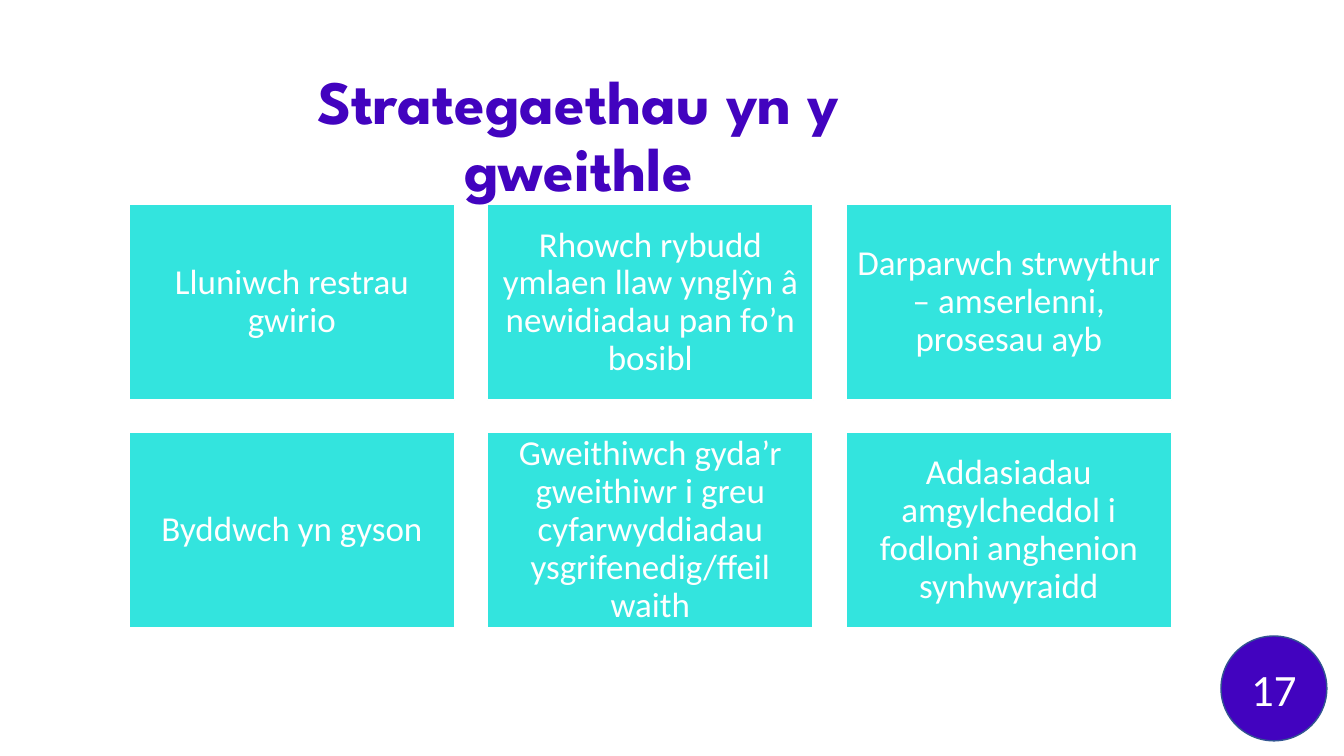
"""Build the slide of six workplace strategies."""
from dataclasses import dataclass

from pptx import Presentation
from pptx import util as u
from pptx.dml.color import RGBColor
from pptx.enum import shapes, text

PURPLE, TURQUOISE, NAVY, WHITE = "4203BF", "33E4DE", "325491", "FFFFFF"
COLUMNS = 3
CARD_LEFT, CARD_TOP = 1.28, 2.03
CARD_WIDTH, CARD_HEIGHT = 3.23, 1.94
COLUMN_STEP, ROW_STEP = 3.555, 2.26
STRATEGIES = (
    "Lluniwch restrau gwirio",
    "Rhowch rybudd ymlaen llaw ynglŷn â newidiadau pan fo’n bosibl",
    "Darparwch strwythur – amserlenni, prosesau ayb",
    "Byddwch yn gyson",
    "Gweithiwch gyda’r gweithiwr i greu cyfarwyddiadau ysgrifenedig/ffeil waith",
    "Addasiadau amgylcheddol i fodloni anghenion synhwyraidd",
)


@dataclass(frozen=True)
class Panel:
    """A filled shape with centred white text."""

    kind: shapes.MSO_SHAPE
    box: tuple[float, float, float, float]
    fill: str
    line: str
    words: str
    size: float
    spacing: float = 1.0


def color(value: str) -> RGBColor:
    """Turn a hex string into a colour."""
    return RGBColor.from_string(value)


def apply(target, formats: dict) -> None:
    """Set each named attribute on the target."""
    for name, value in formats.items():
        setattr(target, name, value)


def write(frame, words: str, size: float, ink: str, spacing: float,
          font: dict, layout: dict) -> None:
    """Fill a text frame with one centred paragraph."""
    apply(frame, {"word_wrap": True, **layout})
    paragraph = frame.paragraphs[0]
    apply(paragraph, {"alignment": text.PP_ALIGN.CENTER, "line_spacing": spacing})
    run = paragraph.add_run()
    run.text = words
    apply(run.font, {"size": u.Pt(size), **font})
    run.font.color.rgb = color(ink)


def draw_panel(slide, panel: Panel) -> None:
    """Draw one panel on the slide."""
    shape = slide.shapes.add_shape(panel.kind, *map(u.Inches, panel.box))
    shape.shadow.inherit = False
    shape.fill.solid()
    shape.fill.fore_color.rgb = color(panel.fill)
    shape.line.color.rgb = color(panel.line)
    shape.line.width = u.Pt(1)
    margins = dict.fromkeys(
        ("margin_left", "margin_top", "margin_right", "margin_bottom"), u.Inches(0.1))
    write(shape.text_frame, panel.words, panel.size, WHITE, panel.spacing,
          {"name": "Calibri"},
          {"vertical_anchor": text.MSO_ANCHOR.MIDDLE, **margins})


def strategy_card(index: int, words: str) -> Panel:
    """Place a strategy in the grid."""
    row, column = divmod(index, COLUMNS)
    box = (CARD_LEFT + column * COLUMN_STEP, CARD_TOP + row * ROW_STEP,
           CARD_WIDTH, CARD_HEIGHT)
    return Panel(shapes.MSO_SHAPE.RECTANGLE, box, TURQUOISE, WHITE, words, 25, 0.9)


def main() -> None:
    """Build and save the presentation."""
    deck = Presentation()
    apply(deck, {"slide_width": u.Inches(13.33), "slide_height": u.Inches(7.5)})
    slide = deck.slides.add_slide(deck.slide_layouts[6])

    heading = slide.shapes.add_textbox(*map(u.Inches, (2.12, 0.66, 7.24, 0.71)))
    write(heading.text_frame, "Strategaethau yn y gweithle", 44, PURPLE, 0.9,
          {"name": "League Spartan", "bold": True},
          {"vertical_anchor": text.MSO_ANCHOR.TOP})

    for index, words in enumerate(STRATEGIES):
        draw_panel(slide, strategy_card(index, words))
    draw_panel(slide, Panel(shapes.MSO_SHAPE.OVAL, (12.11, 6.31, 1.05, 1.04),
                            PURPLE, NAVY, "17", 32))
    deck.save("out.pptx")


if __name__ == "__main__":
    main()
